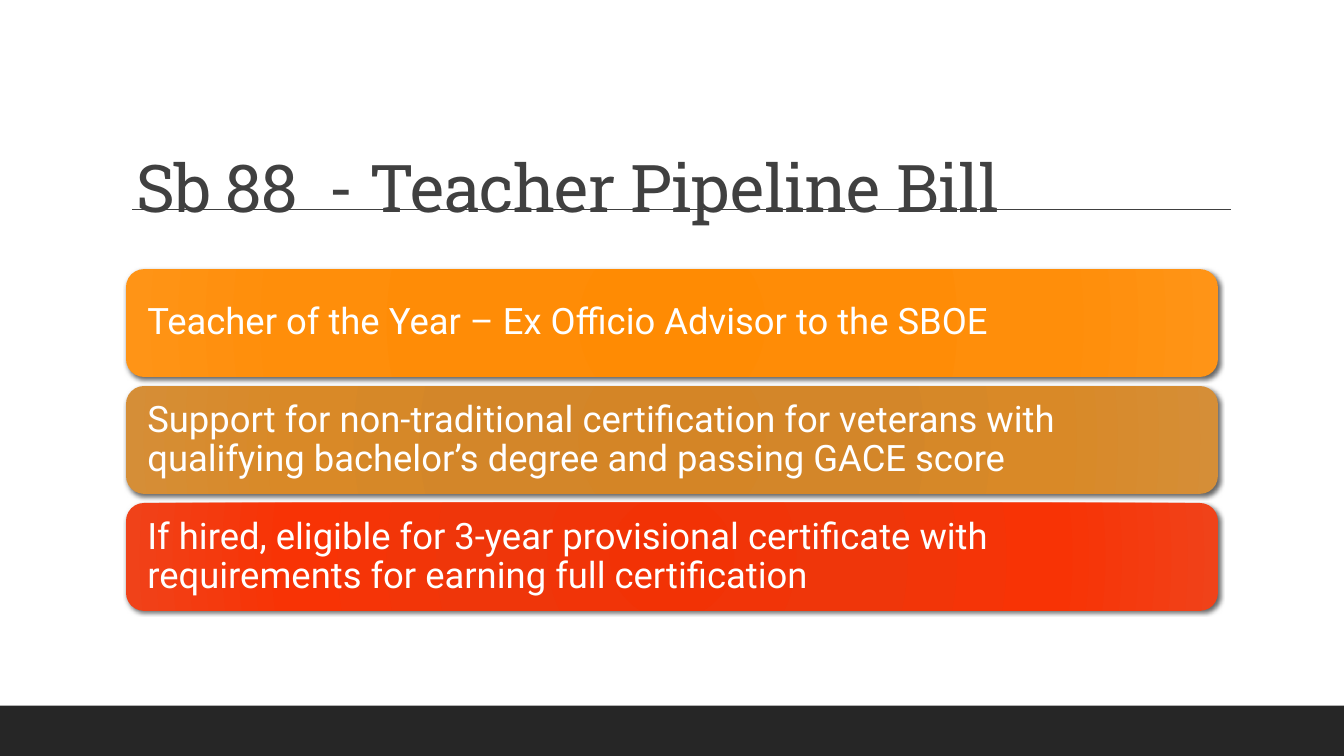
from dataclasses import dataclass

from pptx import Presentation
from pptx.dml.color import RGBColor
from pptx.enum.shapes import MSO_CONNECTOR as Connector, MSO_SHAPE as Shape
from pptx.enum.text import MSO_ANCHOR as Anchor, MSO_AUTO_SIZE as AutoSize, PP_ALIGN as Align
from pptx.oxml import parse_xml
from pptx.oxml.ns import nsdecls, qn
from pptx.util import Inches, Pt


@dataclass(frozen=True)
class Theme:
    ink: str = "404040"
    footer: str = "262626"
    card_text: str = "FFFFFF"
    shadow: str = "000000"
    title_font: str = "Roboto Slab"
    card_font: str = "Roboto"
    title_size: float = 47
    card_size: float = 26
    gradient_stops: tuple = (0, 34, 70, 100)


@dataclass(frozen=True)
class Box:
    left: float
    top: float
    width: float
    height: float

    def inches(self):
        return [Inches(n) for n in (self.left, self.top, self.width, self.height)]

    def inset(self, share_left, share_top, share_width, share_height):
        return Box(
            self.left + self.width * share_left,
            self.top + self.height * share_top,
            self.width * share_width,
            self.height * share_height,
        )

    def rows(self, count, gap):
        height = (self.height - gap * (count - 1)) / count
        return [
            Box(self.left, self.top + row * (height + gap), self.width, height)
            for row in range(count)
        ]


THEME = Theme()
SLIDE = Box(0, 0, 13.33, 7.5)
TITLE = "Sb 88  - Teacher Pipeline Bill"
CARDS = [
    (
        "Teacher of the Year – Ex Officio Advisor to the SBOE",
        ("FF8B03", "FF8C06", "FF8E0A", "FF9416"),
    ),
    (
        "Support for non-traditional certification for veterans with "
        "qualifying bachelor’s degree and passing GACE score",
        ("D48526", "D38629", "D98927", "D58E37"),
    ),
    (
        "If hired, eligible for 3-year provisional certificate with "
        "requirements for earning full certification",
        ("F23205", "EF360A", "F83305", "F04219"),
    ),
]


def set_values(target, values):
    for name, value in values.items():
        setattr(target, name, value)


def write(shape, text, anchor, margin, font, size, color):
    frame = shape.text_frame
    set_values(frame, {
        "word_wrap": True,
        "auto_size": AutoSize.NONE,
        "vertical_anchor": anchor,
        "margin_left": Inches(margin),
        "margin_right": Inches(margin),
    })
    para = frame.paragraphs[0]
    set_values(para, {"alignment": Align.LEFT, "line_spacing": 0.9})
    span = para.add_run()
    span.text = text
    set_values(span.font, {"name": font, "size": Pt(size)})
    span.font.color.rgb = RGBColor.from_string(color)
    return span


def draw_footer(page, box):
    band = page.shapes.add_shape(Shape.RECTANGLE, *box.inches())
    band.shadow.inherit = False
    band.fill.solid()
    band.fill.fore_color.rgb = RGBColor.from_string(THEME.footer)
    band.line.fill.background()


def draw_title(page, box):
    left, y, right = (Inches(n) for n in (box.left + 0.06, box.top + 1.4, box.left + 10.96))
    rule = page.shapes.add_connector(Connector.STRAIGHT, left, y, right, y)
    rule.line.width = Pt(1)
    rule.line.color.rgb = RGBColor.from_string(THEME.ink)
    rule._element.spPr.append(parse_xml(f"<a:effectLst {nsdecls('a')}/>"))

    title = page.shapes.title
    set_values(title, dict(zip(("left", "top", "width", "height"), box.inches())))
    span = write(title, TITLE, Anchor.BOTTOM, 0.1,
                 THEME.title_font, THEME.title_size, THEME.ink)
    span.font._element.set("spc", "-50")
    page.shapes._spTree.append(title._element)


def radial_fill(colors):
    stops = "".join(
        f'<a:gs pos="{stop * 1000}"><a:srgbClr val="{color}"/></a:gs>'
        for stop, color in zip(THEME.gradient_stops, colors)
    )
    return parse_xml(
        f'<a:gradFill {nsdecls("a")} rotWithShape="1"><a:gsLst>{stops}</a:gsLst>'
        '<a:path path="circle"><a:fillToRect l="100000" t="100000" r="100000" b="100000"/>'
        "</a:path></a:gradFill>"
    )


def drop_shadow():
    return parse_xml(
        f'<a:outerShdw {nsdecls("a")} blurRad="{Pt(3)}" dist="{Pt(2)}" dir="{45 * 60000}" '
        f'algn="tl" rotWithShape="0"><a:srgbClr val="{THEME.shadow}">'
        '<a:alpha val="60000"/></a:srgbClr></a:outerShdw>'
    )


def draw_card(page, box, text, colors):
    card = page.shapes.add_shape(Shape.ROUNDED_RECTANGLE, *box.inches())
    card.line.fill.background()
    card.shadow.inherit = False
    properties = card._element.spPr
    properties.find(qn("a:ln")).addprevious(radial_fill(colors))
    properties.find(qn("a:effectLst")).append(drop_shadow())
    write(card, text, Anchor.MIDDLE, 0.16,
          THEME.card_font, THEME.card_size, THEME.card_text)


def draw_cards(page, box):
    for row, (text, colors) in zip(box.rows(len(CARDS), 0.09), CARDS):
        draw_card(page, row, text, colors)


def main():
    deck = Presentation()
    set_values(deck, {"slide_width": Inches(SLIDE.width), "slide_height": Inches(SLIDE.height)})
    page = deck.slides.add_slide(deck.slide_layouts[5])
    draw_footer(page, SLIDE.inset(0, 14 / 15, 1, 1 / 15))
    draw_title(page, Box(1.25, 0.68, 10.83, 1.62))
    draw_cards(page, Box(1.25, 2.67, 10.83, 3.39))
    deck.save("out.pptx")


if __name__ == "__main__":
    main()
